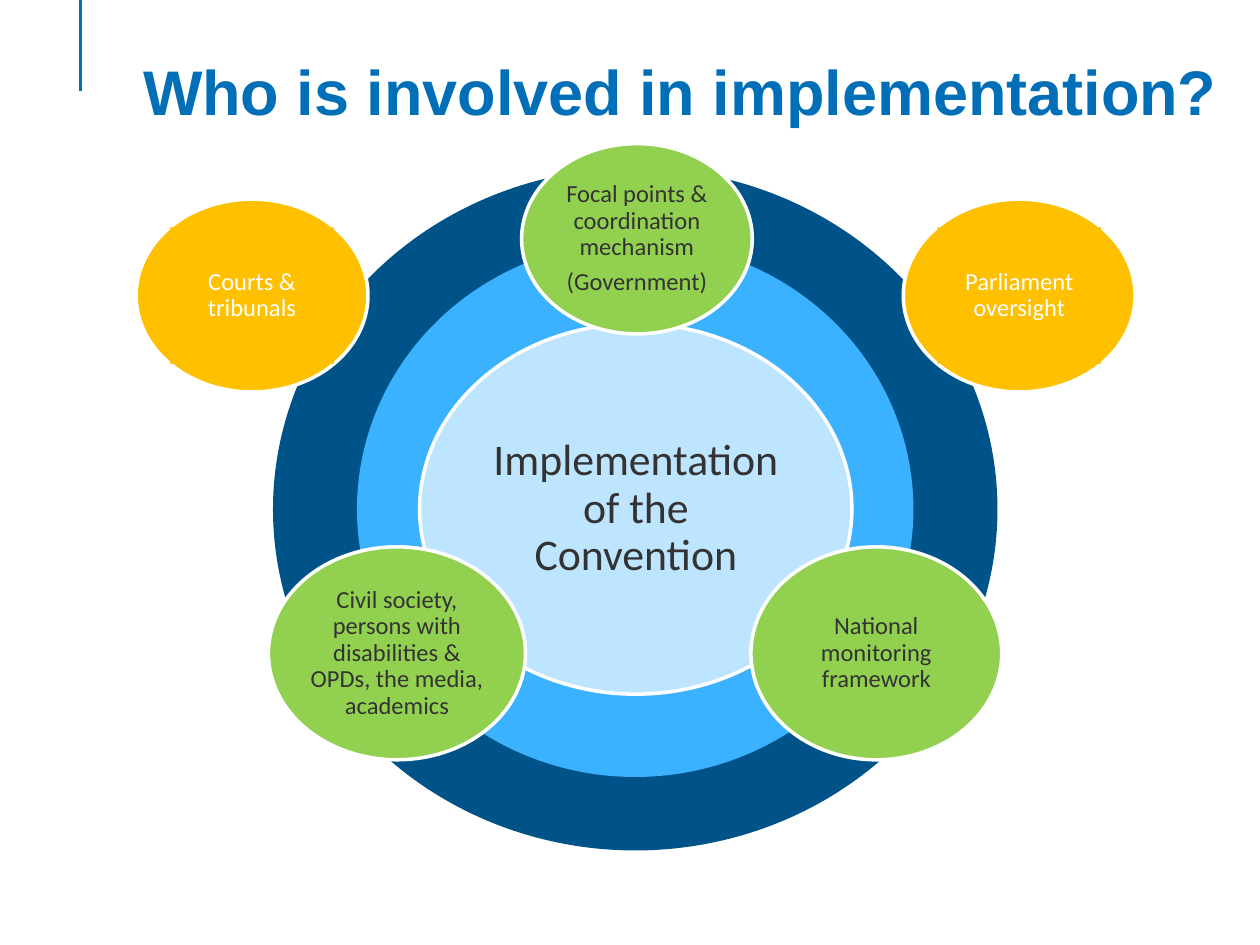
from dataclasses import dataclass
from typing import NamedTuple, Optional

from lxml.etree import SubElement
from pptx import Presentation
from pptx.dml.color import RGBColor
from pptx.enum.shapes import MSO_CONNECTOR, MSO_SHAPE
from pptx.enum.text import MSO_ANCHOR, MSO_AUTO_SIZE, PP_ALIGN
from pptx.oxml.ns import qn
from pptx.util import Pt


@dataclass(frozen=True)
class Theme:
    brand: str = "006FB7"
    outer_ring: str = "005389"
    inner_ring: str = "3BB2FF"
    core: str = "BEE5FF"
    actor: str = "92D050"
    overseer: str = "FFC000"
    white: str = "FFFFFF"
    ink: str = "333333"
    title_font: str = "Arial"
    body_font: str = "Calibri"
    title_size: float = 36
    core_size: float = 25
    label_size: float = 14
    line_width: float = 2


THEME = Theme()


class Frame(NamedTuple):
    left: float
    top: float
    width: float
    height: float

    def points(self) -> list:
        return [Pt(value) for value in self]

    def inscribed(self) -> "Frame":
        share = (1 - 0.5 ** 0.5) / 2
        return Frame(
            self.left + self.width * share,
            self.top + self.height * share,
            self.width * (1 - 2 * share),
            self.height * (1 - 2 * share),
        )


class Ring(NamedTuple):
    frame: Frame
    fill: str


class Bubble(NamedTuple):
    frame: Frame
    lines: tuple
    fill: str = THEME.actor
    ink: str = THEME.ink
    size: float = THEME.label_size
    inset: float = 1.4
    label_fill: Optional[str] = None


RINGS = (
    Ring(Frame(156, 96, 414, 390), THEME.outer_ring),
    Ring(Frame(204, 138, 318, 306), THEME.inner_ring),
)

CONVENTION_BUBBLES = (
    Bubble(Frame(239.8, 185, 247, 211.7), ("Implementation of the Convention",),
           fill=THEME.core, size=THEME.core_size, inset=2.2),
    Bubble(Frame(298.1, 82.1, 131.8, 108.7),
           ("Focal points & coordination mechanism", "(Government)")),
    Bubble(Frame(429.1, 312.5, 143.3, 121.7), ("National monitoring framework",)),
    Bubble(Frame(153.4, 312.5, 146.9, 121.7),
           ("Civil society, persons with disabilities & OPDs, the media, academics",)),
)

OVERSEERS = tuple(
    Bubble(Frame(left, 113.8, 132.5, 110.2), (name,), fill=THEME.overseer,
           ink=THEME.white, label_fill=THEME.overseer)
    for left, name in ((516.2, "Parliament oversight"), (77.8, "Courts & tribunals"))
)


def apply(target, values: dict) -> None:
    for name, value in values.items():
        setattr(target, name, value)


def paint(shape, fill: str, line: Optional[str] = None) -> None:
    shape.shadow.inherit = False
    shape.fill.solid()
    shape.fill.fore_color.rgb = RGBColor.from_string(fill)
    if line:
        shape.line.color.rgb = RGBColor.from_string(line)
        shape.line.width = Pt(THEME.line_width)
    else:
        shape.line.fill.background()


def write(paragraph, text: str, font: dict, color: str) -> None:
    span = paragraph.add_run()
    span.text = text
    apply(span.font, font)
    span.font.color.rgb = RGBColor.from_string(color)


def draw_accent(page) -> None:
    accent = page.shapes.add_connector(
        MSO_CONNECTOR.STRAIGHT, Pt(46), Pt(0), Pt(46), Pt(52))
    accent.line.color.rgb = RGBColor.from_string(THEME.brand)
    accent.line.width = Pt(THEME.line_width)
    SubElement(accent._element.spPr, qn("a:effectLst"))


def draw_title(page, text: str) -> None:
    box = page.shapes.add_textbox(*Frame(36, 25.9, 669.6, 51.1).points())
    apply(box.text_frame, {
        "word_wrap": True,
        "auto_size": MSO_AUTO_SIZE.SHAPE_TO_FIT_TEXT,
        "vertical_anchor": MSO_ANCHOR.MIDDLE,
    })
    paragraph = box.text_frame.paragraphs[0]
    paragraph.alignment = PP_ALIGN.CENTER
    paragraph._p.get_or_add_pPr().set("marL", str(Pt(36)))
    font = {"name": THEME.title_font, "size": Pt(THEME.title_size), "bold": True}
    write(paragraph, text, font, THEME.brand)


def draw_ring(page, ring: Ring) -> None:
    shape = page.shapes.add_shape(MSO_SHAPE.FLOWCHART_CONNECTOR, *ring.frame.points())
    paint(shape, ring.fill)


def draw_label(shapes, bubble: Bubble) -> None:
    area = bubble.frame.inscribed().points()
    if bubble.label_fill:
        label = shapes.add_shape(MSO_SHAPE.RECTANGLE, *area)
        paint(label, bubble.label_fill)
    else:
        label = shapes.add_textbox(*area)
    inset = Pt(bubble.inset)
    apply(label.text_frame, {
        "word_wrap": True,
        "vertical_anchor": MSO_ANCHOR.MIDDLE,
        "margin_left": inset,
        "margin_top": inset,
        "margin_right": inset,
        "margin_bottom": inset,
    })
    font = {"name": THEME.body_font, "size": Pt(bubble.size)}
    for index, line in enumerate(bubble.lines):
        text_frame = label.text_frame
        paragraph = text_frame.add_paragraph() if index else text_frame.paragraphs[0]
        apply(paragraph, {
            "alignment": PP_ALIGN.CENTER,
            "line_spacing": 0.9,
            "space_after": Pt(0.35 * bubble.size),
        })
        write(paragraph, line, font, bubble.ink)


def draw_group(page, bubbles: tuple) -> None:
    shapes = page.shapes.add_group_shape().shapes
    for bubble in bubbles:
        oval = shapes.add_shape(MSO_SHAPE.OVAL, *bubble.frame.points())
        paint(oval, bubble.fill, THEME.white)
        draw_label(shapes, bubble)


def main() -> None:
    deck = Presentation()
    apply(deck, {"slide_width": Pt(720), "slide_height": Pt(540)})
    page = deck.slides.add_slide(deck.slide_layouts[6])
    draw_accent(page)
    for ring in RINGS:
        draw_ring(page, ring)
    draw_title(page, "Who is involved in implementation?")
    draw_group(page, CONVENTION_BUBBLES)
    for overseer in OVERSEERS:
        draw_group(page, (overseer,))
    deck.save("out.pptx")


if __name__ == "__main__":
    main()
